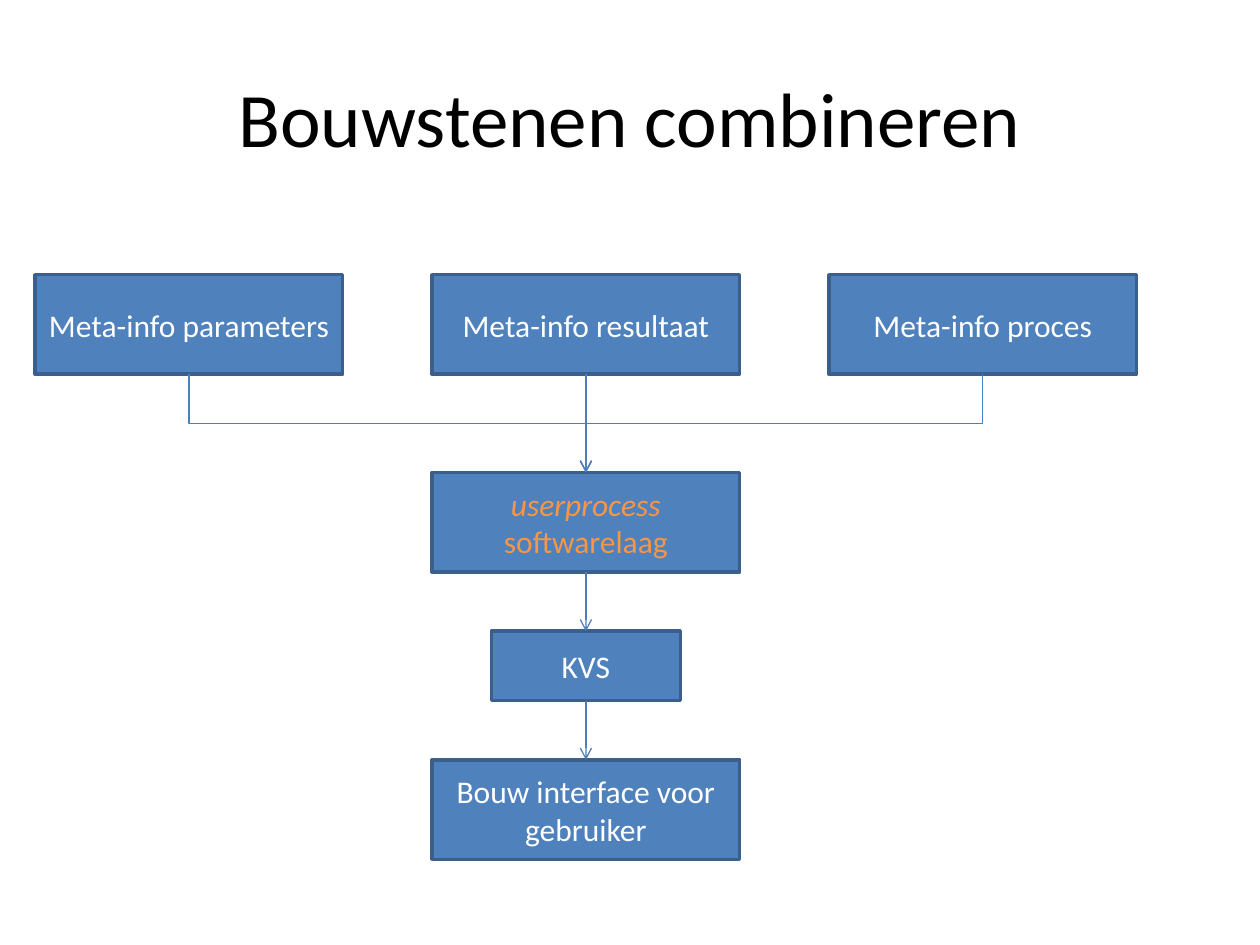
from lxml import etree
from pptx import Presentation
from pptx.dml.color import RGBColor
from pptx.enum.shapes import MSO_CONNECTOR, MSO_SHAPE
from pptx.enum.text import MSO_ANCHOR, PP_ALIGN
from pptx.oxml.ns import qn
from pptx.util import Inches, Pt

RECTANGLE = MSO_SHAPE.RECTANGLE
STRAIGHT, ELBOW = MSO_CONNECTOR.STRAIGHT, MSO_CONNECTOR.ELBOW
MIDDLE, CENTER = MSO_ANCHOR.MIDDLE, PP_ALIGN.CENTER
TOP_SITE, BOTTOM_SITE = 0, 2

BLACK = RGBColor(0x00, 0x00, 0x00)
WHITE = RGBColor(0xFF, 0xFF, 0xFF)
BLUE = RGBColor(0x4F, 0x81, 0xBD)
BORDER = RGBColor(0x3A, 0x5F, 0x8C)
ARROW = RGBColor(0x4B, 0x7E, 0xBC)
ORANGE = RGBColor(0xF7, 0x96, 0x46)

prs = Presentation()
prs.slide_width, prs.slide_height = Inches(10), Inches(7.5)
slide = prs.slides.add_slide(prs.slide_layouts[6])


def write(shape, parts, size, color):
    """Centre the parts as runs of one paragraph and return the runs."""
    frame = shape.text_frame
    frame.word_wrap = True
    frame.vertical_anchor = MIDDLE
    paragraph = frame.paragraphs[0]
    paragraph.alignment = CENTER
    for part in parts:
        run = paragraph.add_run()
        run.text = part
        run.font.name = "Calibri"
        run.font.size = Pt(size)
        run.font.color.rgb = color
    return paragraph.runs


title = slide.shapes.add_textbox(Inches(0.5), Inches(0.3), Inches(9), Inches(1.25))
write(title, ["Bouwstenen combineren"], 44, BLACK)

# Each block: centre x, top, width, height, text parts, text colour
CENTER_X, COLUMN_STEP = 4.65, 3.15
WIDTH, HEIGHT = 2.44, 0.79
blocks = [
    (CENTER_X - COLUMN_STEP, 2.18, WIDTH, HEIGHT, ["Meta-info parameters"], WHITE),
    (CENTER_X, 2.18, WIDTH, HEIGHT, ["Meta-info resultaat"], WHITE),
    (CENTER_X + COLUMN_STEP, 2.18, WIDTH, HEIGHT, ["Meta-info proces"], WHITE),
    (CENTER_X, 3.75, WIDTH, HEIGHT, ["userprocess", " softwarelaag"], ORANGE),
    (CENTER_X, 5.01, 1.5, 0.55, ["KVS"], WHITE),
    (CENTER_X, 6.03, WIDTH, HEIGHT, ["Bouw interface voor gebruiker"], WHITE),
]
boxes = []
for center_x, top, width, height, parts, color in blocks:
    box = slide.shapes.add_shape(
        RECTANGLE, Inches(center_x - width / 2), Inches(top), Inches(width), Inches(height)
    )
    box.shadow.inherit = False
    box.fill.solid()
    box.fill.fore_color.rgb = BLUE
    box.line.color.rgb = BORDER
    box.line.width = Pt(2)
    runs = write(box, parts, 18, color)
    runs[0].font.italic = color == ORANGE
    boxes.append(box)

parameters, result, process, user_layer, kvs, interface = boxes
flows = [
    (parameters, user_layer),
    (result, user_layer),
    (process, user_layer),
    (user_layer, kvs),
    (kvs, interface),
]
for source, target in flows:
    bent = source in (parameters, process)
    arrow = slide.shapes.add_connector(ELBOW if bent else STRAIGHT, 0, 0, 0, 0)
    arrow.begin_connect(source, BOTTOM_SITE)
    arrow.end_connect(target, TOP_SITE)
    properties = arrow._element.spPr
    if bent:
        # A quarter turn makes the elbow leave downwards instead of sideways
        middle_x = arrow.left + arrow.width // 2
        middle_y = arrow.top + arrow.height // 2
        arrow.width, arrow.height = arrow.height, arrow.width
        arrow.left = middle_x - arrow.width // 2
        arrow.top = middle_y - arrow.height // 2
        turn = properties.find(qn("a:xfrm"))
        turn.set("rot", "16200000" if source is parameters else "5400000")
        turn.set("flipH", "1" if source is parameters else "0")
    arrow.line.color.rgb = ARROW
    arrow.line.width = Pt(0.75)
    etree.SubElement(properties.find(qn("a:ln")), qn("a:tailEnd"), type="arrow")
    etree.SubElement(properties, qn("a:effectLst"))

prs.save("out.pptx")
